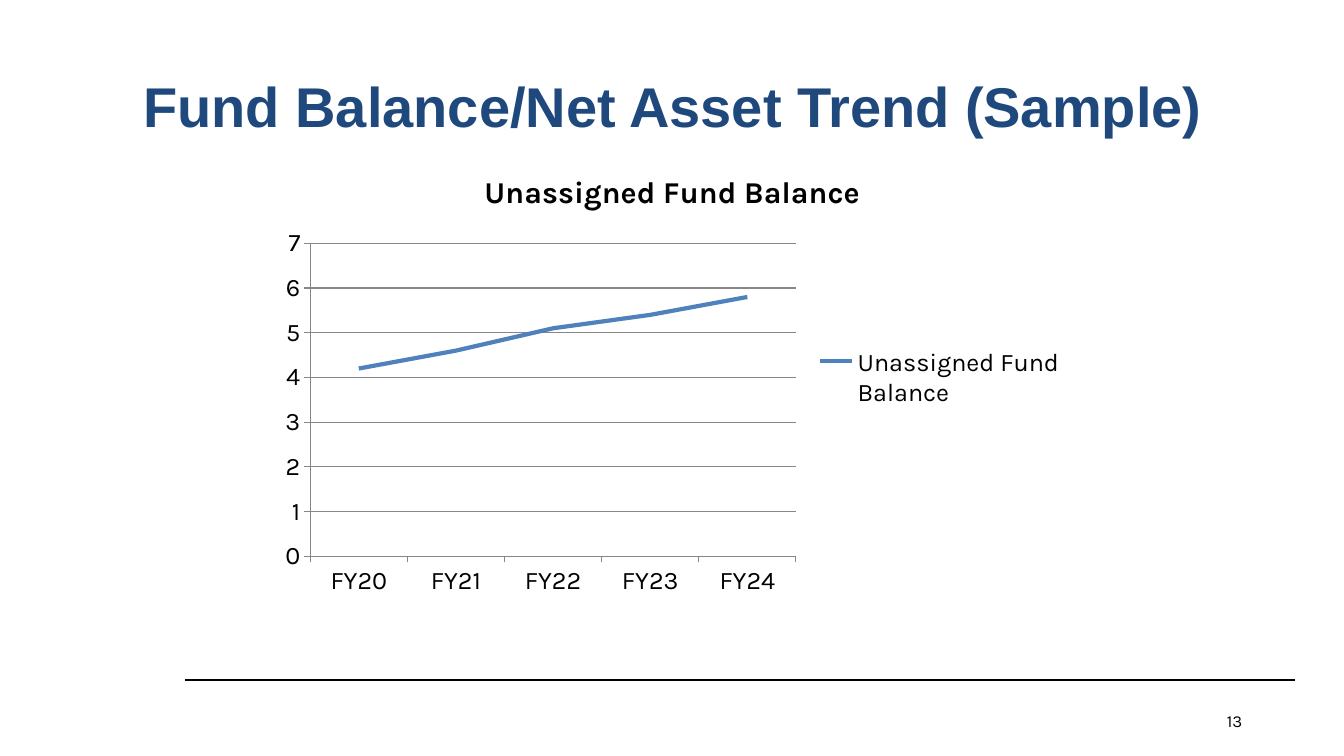
from dataclasses import dataclass

from lxml.etree import SubElement
from pptx import Presentation
from pptx.chart.data import CategoryChartData
from pptx.dml.color import RGBColor
from pptx.enum.chart import XL_CHART_TYPE as ChartType
from pptx.enum.chart import XL_LEGEND_POSITION as LegendPosition
from pptx.enum.chart import XL_MARKER_STYLE as MarkerStyle
from pptx.enum.chart import XL_TICK_MARK as TickMark
from pptx.enum.shapes import MSO_CONNECTOR as ConnectorType
from pptx.enum.text import MSO_ANCHOR as Anchor
from pptx.enum.text import PP_ALIGN as Align
from pptx.oxml.ns import qn
from pptx.slide import Slide
from pptx.util import Emu, Pt

EMU_PER_PX = 9144  # 100 px to the inch


@dataclass(frozen=True)
class Theme:
    heading_font: str = "Arial"
    body_font: str = "Karla"
    navy: RGBColor = RGBColor(0x1F, 0x49, 0x7D)
    black: RGBColor = RGBColor(0, 0, 0)
    grid: RGBColor = RGBColor(0x87, 0x87, 0x87)
    series: RGBColor = RGBColor(0x4F, 0x81, 0xBD)
    heading_size: Pt = Pt(40)
    chart_title_size: Pt = Pt(21.6)
    chart_size: Pt = Pt(18)
    number_size: Pt = Pt(12)
    footer_line: Pt = Pt(1.5)
    grid_line: Pt = Pt(0.75)
    series_line: Pt = Pt(3)


THEME = Theme()


@dataclass(frozen=True)
class Label:
    text: str
    area: tuple[int, int, int, int]
    font: str
    size: Pt
    color: RGBColor
    align: Align
    anchor: Anchor
    bold: bool = False


LABELS = (
    Label("13", (942, 695, 300, 40), THEME.body_font, THEME.number_size,
          THEME.black, Align.RIGHT, Anchor.MIDDLE),
    Label("Fund Balance/Net Asset Trend (Sample)", (42, 66, 1250, 125),
          THEME.heading_font, THEME.heading_size, THEME.navy,
          Align.CENTER, Anchor.TOP, bold=True),
)

BALANCE_NAME = "Unassigned Fund Balance"
BALANCES = {"FY20": 4.2, "FY21": 4.6, "FY22": 5.1, "FY23": 5.4, "FY24": 5.8}


def px(length: int) -> Emu:
    return Emu(length * EMU_PER_PX)


def add_footer_line(page: Slide) -> None:
    line = page.shapes.add_connector(
        ConnectorType.STRAIGHT, px(184), px(675), px(1284), px(675))
    line.line.color.rgb = THEME.black
    line.line.width = THEME.footer_line
    SubElement(line._element.spPr, qn("a:effectLst"))


def add_label(page: Slide, label: Label) -> None:
    box = page.shapes.add_textbox(*map(px, label.area))
    frame = box.text_frame
    frame.word_wrap = True
    frame.vertical_anchor = label.anchor
    frame.text = label.text
    para = frame.paragraphs[0]
    para.alignment = label.align
    font = para.runs[0].font
    font.name = label.font
    font.size = label.size
    font.bold = label.bold
    font.color.rgb = label.color


def add_balance_chart(page: Slide) -> None:
    data = CategoryChartData()
    data.categories = list(BALANCES)
    data.add_series(BALANCE_NAME, list(BALANCES.values()))
    chart = page.shapes.add_chart(
        ChartType.LINE, px(267), px(150), px(800), px(450), data).chart
    chart.font.name = THEME.body_font
    chart.font.size = THEME.chart_size
    chart.font.color.rgb = THEME.black

    chart.has_title = True
    title = chart.chart_title.text_frame
    title.text = BALANCE_NAME
    title_font = title.paragraphs[0].runs[0].font
    title_font.name = THEME.body_font
    title_font.size = THEME.chart_title_size
    title_font.bold = True
    title_font.color.rgb = THEME.black

    chart.has_legend = True
    chart.legend.position = LegendPosition.RIGHT
    chart.legend.include_in_layout = False

    value_axis = chart.value_axis
    value_axis.minimum_scale = 0
    value_axis.maximum_scale = 7
    value_axis.major_unit = 1
    value_axis.has_major_gridlines = True
    for axis in (chart.category_axis, value_axis):
        axis.major_tick_mark = TickMark.OUTSIDE
        axis.minor_tick_mark = TickMark.NONE
    for lined in (chart.category_axis, value_axis, value_axis.major_gridlines):
        lined.format.line.color.rgb = THEME.grid
        lined.format.line.width = THEME.grid_line

    plot = chart.plots[0]
    plot.vary_by_categories = False
    series = plot.series[0]
    series.smooth = False
    series.marker.style = MarkerStyle.NONE
    series.format.line.color.rgb = THEME.series
    series.format.line.width = THEME.series_line


def main() -> None:
    deck = Presentation()
    deck.slide_width, deck.slide_height = px(1333), px(750)
    page = deck.slides.add_slide(deck.slide_layouts[6])
    add_footer_line(page)
    for label in LABELS:
        add_label(page, label)
    add_balance_chart(page)
    deck.save("out.pptx")


if __name__ == "__main__":
    main()
